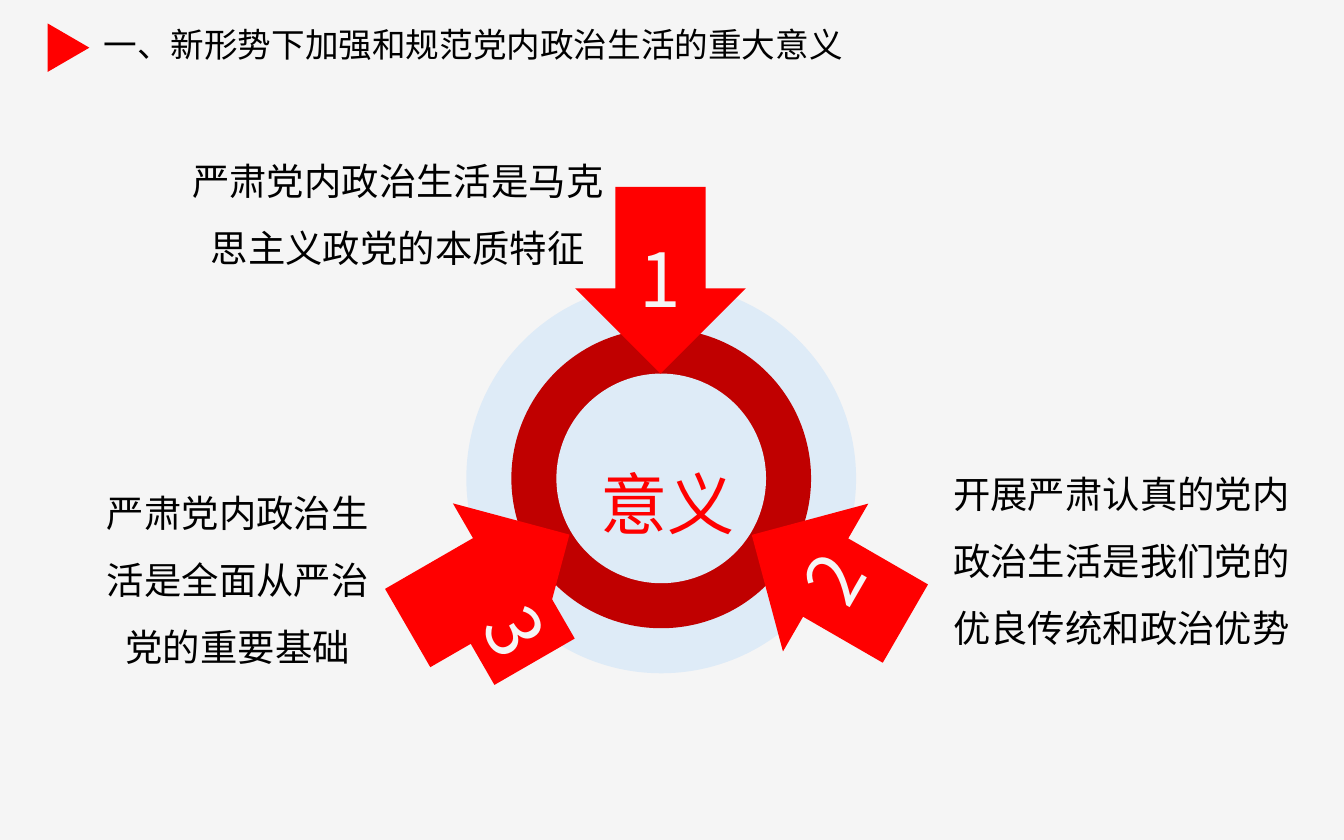
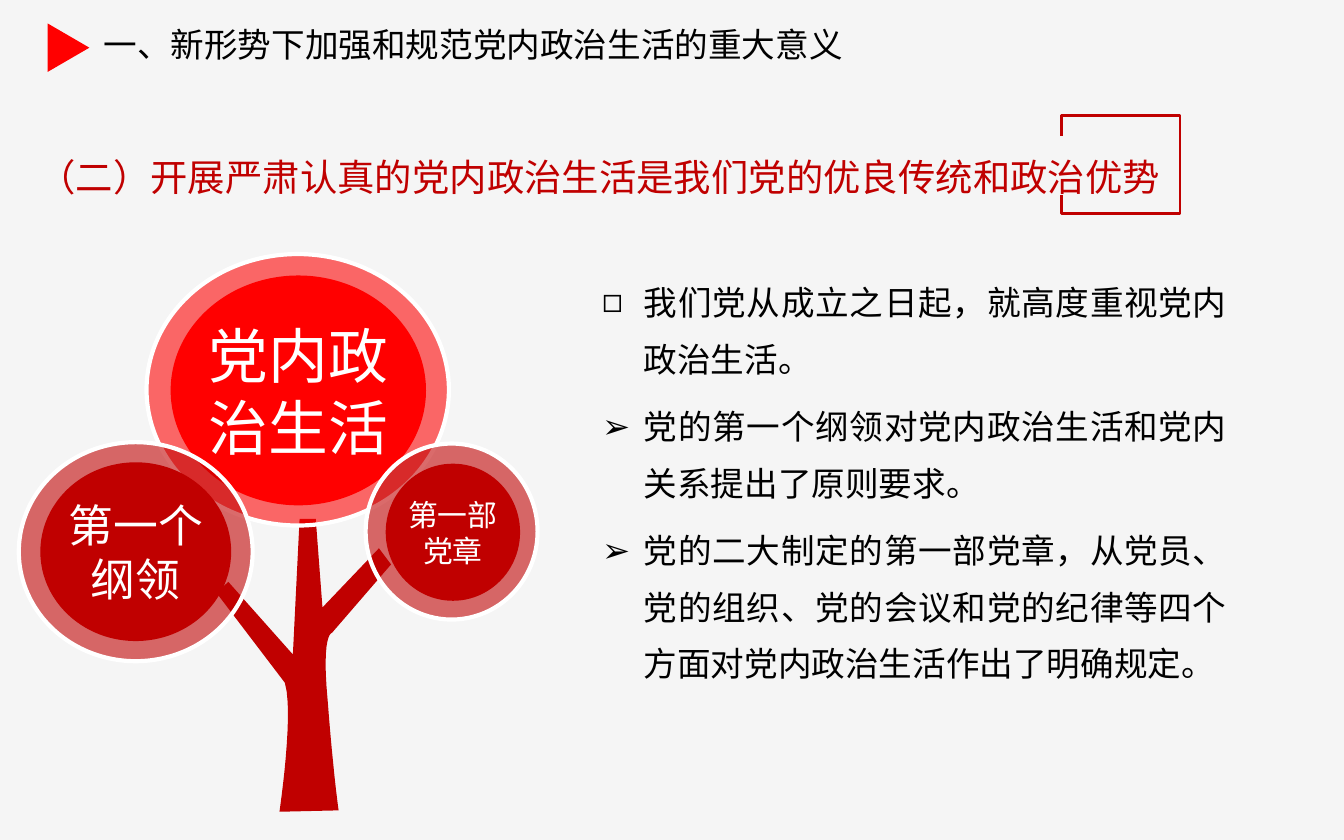
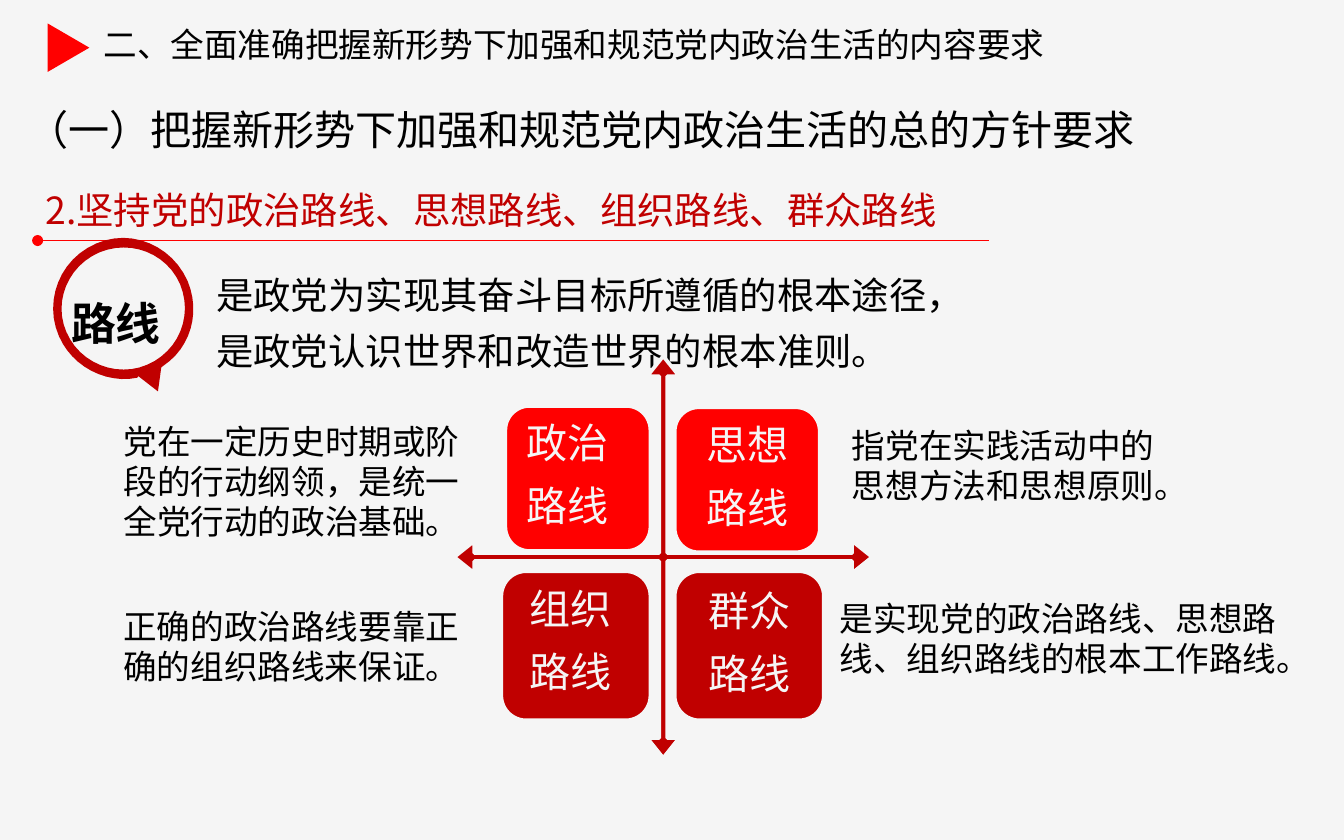
from dataclasses import dataclass

from lxml.etree import SubElement
from pptx import Presentation
from pptx.dml.color import RGBColor
from pptx.enum.shapes import MSO_CONNECTOR, MSO_SHAPE
from pptx.enum.text import MSO_ANCHOR, MSO_AUTO_SIZE, PP_ALIGN
from pptx.oxml.ns import qn
from pptx.util import Pt

PX = 9144  # one px is a hundredth of an inch
WIDE, HIGH = 1000, 625


@dataclass(frozen=True)
class Theme:
    font: str = "Noto Sans CJK SC"
    paper: str = "F5F5F5"
    white: str = "FFFFFF"
    ink: str = "000000"
    red: str = "FF0000"
    deep: str = "C00000"
    pale: str = "DEEBF7"
    body: int = 18
    lead: int = 20
    head: int = 22
    bold: int = 24
    hub: int = 36
    digit: int = 40


T = Theme()
LEFT, MID, JUST = PP_ALIGN.LEFT, PP_ALIGN.CENTER, PP_ALIGN.JUSTIFY

# ---- Content: boxes are left, top, width, height ----
PART_ONE = "一、新形势下加强和规范党内政治生活的重大意义"
PART_TWO = "二、全面准确把握新形势下加强和规范党内政治生活的内容要求"

HUB = (492, 356)
RINGS = [(290, T.pale), (223, T.deep), (156, T.pale)]
ARROWS = [  # arrow box, turn, digit, digit box, digit turn
    ((428, 139, 127, 139), 0, "1", (465, 172, 53, 69), 0),
    ((553, 365, 127, 132), 120, "2", (593, 397, 53, 66), 300),
    ((300, 363, 127, 139), 240, "3", (358, 435, 53, 69), 60),
]
REASONS = [
    ((127, 96, 338, 111), "严肃党内政治生活是马克思主义政党的本质特征"),
    ((696, 329, 277, 162), "开展严肃认真的党内政治生活是我们党的优良传统和政治优势"),
    ((65, 343, 224, 162), "严肃党内政治生活是全面从严治党的重要基础"),
]

TRADITION = "（二）开展严肃认真的党内政治生活是我们党的优良传统和政治优势"
POINTS = [
    ("◻", "我们党从成立之日起，就高度重视党内政治生活。"),
    ("➢", "党的第一个纲领对党内政治生活和党内关系提出了原则要求。"),
    ("➢", "党的二大制定的第一部党章，从党员、党的组织、党的会议和党的纪律等四个"
          "方面对党内政治生活作出了明确规定。"),
]
CROWNS = [  # outer box, inner box, colour, size, words
    ((109, 189, 225, 202), (127, 205, 190, 171), T.red, 32, "党内政治生活"),
    ((272, 330, 128, 131), (287, 345, 100, 102), T.deep, 16, "第一部党章"),
    ((14, 329, 174, 163), (30, 344, 142, 133), T.deep, 24, "第一个纲领"),
]
# Outlines: a pair is a corner, six numbers are a curve
TRUNK = [(208, 604), (208, 604, 219, 530, 212, 508), (161, 441), (170, 433),
         (218, 487), (223, 386), (235, 386), (240, 452), (282, 408), (291, 420),
         (247, 471), (247, 471, 239, 471, 244, 523),
         (248, 575, 252, 603, 252, 603)]
FRAME = [(790, 101), (790, 86), (878, 86), (878, 159), (790, 159), (790, 145)]

POLICY = "（一）把握新形势下加强和规范党内政治生活的总的方针要求"
LINES = "2.坚持党的政治路线、思想路线、组织路线、群众路线"
TERM = "路线"
MEANING = "是政党为实现其奋斗目标所遵循的根本途径，是政党认识世界和改造世界的根本准则。"
BUBBLE = [
    [(131, 227), (126, 202, 102, 186, 77, 191), (53, 196, 37, 220, 42, 245),
     (47, 270, 71, 286, 95, 281), (120, 276, 136, 251, 131, 227)],
    [(152, 223), (138, 235), (139, 236), (139, 260, 121, 282, 97, 287),
     (69, 293, 41, 275, 35, 246), (29, 218, 48, 191, 76, 185),
     (101, 180, 125, 193, 134, 215), (135, 217)],
]
CROSS = (338, 265, 311, 299)
TILES = [  # left, top, side, colour, word, word place, note, note box
    (376, 302, 108, T.red, "政治", (382, 310),
     "党在一定历史时期或阶段的行动纲领，是统一全党行动的政治基础。", (82, 308, 279, 101)),
    (502, 303, 108, T.red, "思想", (516, 311),
     "指党在实践活动中的思想方法和思想原则。", (624, 311, 256, 71)),
    (373, 425, 111, T.deep, "组织", (384, 433),
     "正确的政治路线要靠正确的组织路线来保证。", (82, 446, 287, 71)),
    (502, 425, 111, T.deep, "群众", (517, 435),
     "是实现党的政治路线、思想路线、组织路线的根本工作路线。", (615, 440, 347, 71)),
]


# ---- Tools ----
def emu(box):
    return [round(n * PX) for n in box]


def rgb(code):
    return RGBColor.from_string(code)


def place(shape, box):
    shape.left, shape.top, shape.width, shape.height = emu(box)


def paint(shape, fill=None, line=None, width=0, alpha=None):
    shape.shadow.inherit = False
    if fill:
        shape.fill.solid()
        shape.fill.fore_color.rgb = rgb(fill)
        if alpha:
            tone = shape.element.spPr.find(qn("a:solidFill"))[0]
            SubElement(tone, qn("a:alpha"), val=str(alpha * 1000))
    else:
        shape.fill.background()
    if line:
        shape.line.color.rgb = rgb(line)
        shape.line.width = Pt(width)
    else:
        shape.line.fill.background()
    return shape


def draw(slide, kind, box, turn=0, **look):
    shape = slide.shapes.add_shape(kind, *emu(box))
    shape.rotation = turn
    return paint(shape, **look)


def trace(steps, cuts=12):
    """Turn corners and cubic curves into a list of points in EMU."""
    spots = []
    for step in steps:
        if len(step) == 2:
            spots.append(step)
            continue
        start, one, two, end = spots[-1], step[:2], step[2:4], step[4:]
        for cut in range(1, cuts + 1):
            t = cut / cuts
            u = 1 - t
            spots.append(tuple(
                u**3 * a + 3 * u * u * t * b + 3 * u * t * t * c + t**3 * d
                for a, b, c, d in zip(start, one, two, end)))
    return [emu(spot) for spot in spots]


def outline(slide, parts, close=True, turn=0, **look):
    first, *rest = [trace(part) for part in parts]
    pen = slide.shapes.build_freeform(*first[0])
    pen.add_line_segments(first[1:], close=close)
    for part in rest:
        pen.move_to(*part[0])
        pen.add_line_segments(part[1:], close=close)
    shape = pen.convert_to_shape()
    shape.rotation = turn
    return paint(shape, **look)


def write(shape, lines, size, color=T.ink, align=LEFT, anchor=MSO_ANCHOR.TOP,
          space=1.0, before=0, after=0, bold=False, wrap=True, inset=None,
          marks=()):
    frame = shape.text_frame
    frame.auto_size = MSO_AUTO_SIZE.NONE
    frame.word_wrap = wrap
    frame.vertical_anchor = anchor
    if inset is not None:
        frame.margin_left = frame.margin_right = inset
        frame.margin_top = frame.margin_bottom = inset
    for i, line in enumerate(lines):
        para = frame.add_paragraph() if i else frame.paragraphs[0]
        para.alignment = align
        para.line_spacing = space
        para.space_before = Pt(before if i else 0)
        para.space_after = Pt(after)
        if marks:
            props = para._p.get_or_add_pPr()
            props.set("marL", str(31 * PX))
            props.set("indent", str(-31 * PX))
            SubElement(props, qn("a:buChar"), char=marks[i])
        run = para.add_run()
        run.text = line
        run.font.size = Pt(size)
        run.font.bold = bold
        run.font.color.rgb = rgb(color)
        run.font.name = T.font
        SubElement(run.font._element, qn("a:ea"), typeface=T.font)


def label(slide, box, lines, size, **style):
    write(slide.shapes.add_textbox(*emu(box)), lines, size, **style)


def start(deck, title, width, layout=5):
    slide = deck.slides.add_slide(deck.slide_layouts[layout])
    place(slide.shapes.title, (67, 13, width, 40))
    write(slide.shapes.title, [title], T.body)
    return slide


def brand(deck, slide):
    """Give the master its background and the title marker."""
    master = deck.slide_master
    master.background.fill.solid()
    master.background.fill.fore_color.rgb = rgb(T.paper)
    mark = draw(slide, MSO_SHAPE.ISOSCELES_TRIANGLE, (33, 20, 36, 31), 90,
                fill=T.red)
    master.shapes.element.append(mark.element)


# ---- Slides ----
def reasons(deck):
    slide = start(deck, PART_ONE, 622)
    brand(deck, slide)
    x, y = HUB
    for size, color in RINGS:
        draw(slide, MSO_SHAPE.OVAL, (x - size / 2, y - size / 2, size, size),
             fill=color)
    label(slide, (436, 309, 121, 101), ["意义"], T.hub, color=T.red, align=MID,
          space=1.5, wrap=False)
    for box, turn, digit, spot, tilt in ARROWS:
        arrow = draw(slide, MSO_SHAPE.DOWN_ARROW, box, turn, fill=T.red)
        arrow.adjustments[0] = 0.53
        plate = draw(slide, MSO_SHAPE.RECTANGLE, spot, tilt, fill=T.red)
        write(plate, [digit], T.digit, T.paper, MID, MSO_ANCHOR.MIDDLE,
              wrap=False)
    for box, words in REASONS:
        label(slide, box, [words], T.lead, align=MID, space=1.5)


def tradition(deck):
    slide = start(deck, PART_ONE, 622, layout=1)
    outline(slide, [TRUNK], fill=T.deep)
    for outer, inner, color, size, words in CROWNS:
        draw(slide, MSO_SHAPE.OVAL, outer, fill=color, alpha=58, line=T.white,
             width=2.25)
        core = draw(slide, MSO_SHAPE.OVAL, inner, fill=color)
        write(core, [words], size, T.white, MID, MSO_ANCHOR.MIDDLE, after=6,
              inset=0)
    body = slide.placeholders[1]
    place(body, (438, 193, 485, 300))
    marks, lines = zip(*POINTS)
    write(body, lines, T.body, align=JUST, space=1.4, after=6, marks=marks)
    outline(slide, [FRAME], close=False, line=T.deep, width=1.5)
    label(slide, (-1, 97, 894, 52), [TRADITION], T.lead, color=T.deep,
          align=MID, anchor=MSO_ANCHOR.MIDDLE, space=1.5)


def policy(deck):
    slide = start(deck, PART_TWO, 780)
    label(slide, (11, 73, 941, 47), [POLICY], T.head)
    rule = slide.shapes.add_connector(MSO_CONNECTOR.STRAIGHT,
                                      *emu((28, 179, 736, 179)))
    rule.line.color.rgb = rgb(T.red)
    rule.line.width = Pt(0.75)
    SubElement(rule.line._get_or_add_ln(), qn("a:headEnd"), type="oval")
    SubElement(rule.element.spPr, qn("a:effectLst"))
    strip = draw(slide, MSO_SHAPE.ROUNDED_RECTANGLE, (20, 134, 803, 44))
    strip.adjustments[0] = 0.31
    write(strip, [LINES], T.lead, T.deep, anchor=MSO_ANCHOR.MIDDLE)

    outline(slide, BUBBLE, turn=78.5, fill=T.deep)
    label(slide, (43, 215, 88, 50), [TERM], T.bold, bold=True, wrap=False)
    label(slide, (151, 189, 585, 94), [MEANING], T.lead, space=Pt(30))

    cross = draw(slide, MSO_SHAPE.QUAD_ARROW, CROSS, fill=T.deep, line=T.paper,
                 width=2)
    for i, share in enumerate((0.02, 0.04, 0.05)):
        cross.adjustments[i] = share
    for x, y, side, color, word, spot, note, box in TILES:
        draw(slide, MSO_SHAPE.ROUNDED_RECTANGLE, (x, y, side, side), fill=color,
             line=T.paper, width=2)
        label(slide, (*spot, 89, 91), [word, TERM], T.head, color=T.paper,
              space=0.9, before=10)
        label(slide, box, [note], T.body)


def main():
    deck = Presentation()
    deck.slide_width, deck.slide_height = emu((WIDE, HIGH))
    for build in (reasons, tradition, policy):
        build(deck)
    deck.save("out.pptx")


if __name__ == "__main__":
    main()
